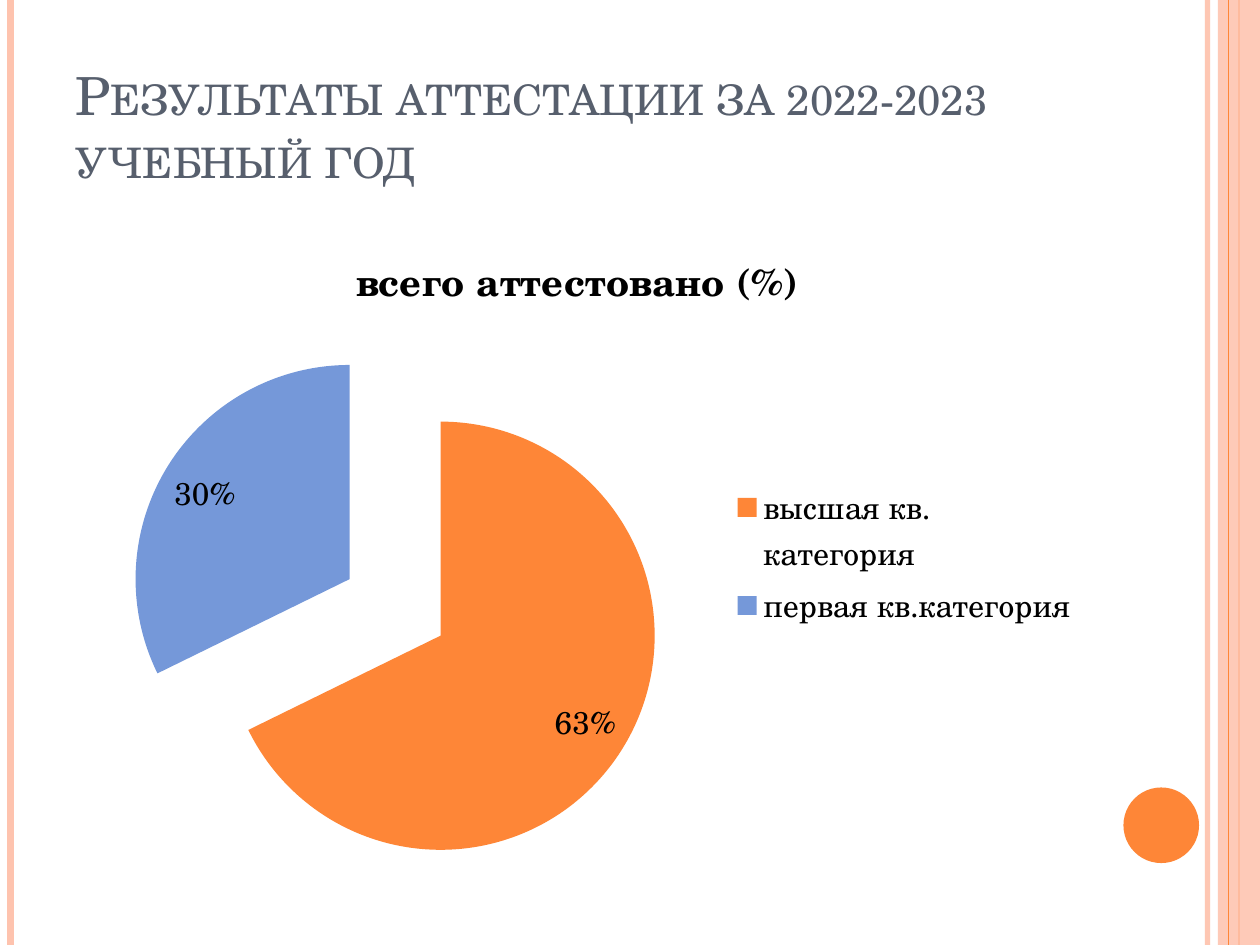
"""Build the slide with a pie chart of staff certification results."""
from dataclasses import dataclass

from lxml.etree import SubElement
from pptx import Presentation
from pptx.chart.data import CategoryChartData
from pptx.dml.color import RGBColor
from pptx.enum.chart import XL_CHART_TYPE, XL_LABEL_POSITION, XL_LEGEND_POSITION
from pptx.enum.shapes import MSO_CONNECTOR, MSO_SHAPE
from pptx.enum.text import MSO_ANCHOR
from pptx.oxml import parse_xml
from pptx.oxml.ns import nsdecls, qn
from pptx.util import Pt

WIDTH, HEIGHT = 720, 540
FONT = "TeX Gyre Schola"
ORANGE, PEACH, BLUE, SLATE, BLACK = "FE8637", "FEC3AE", "7598D9", "575F6D", "000000"
CHART_TITLE = "всего аттестовано (%)"


@dataclass
class Rule:
    x: float
    width: float
    color: str
    alpha: int = 100


@dataclass
class Block:
    kind: MSO_SHAPE
    left: float
    top: float
    width: float
    height: float
    color: str
    alpha: int = 100


@dataclass
class Slice:
    label: str
    value: float
    color: str


DECOR = [
    Rule(690, 3, PEACH, 93),
    Rule(6, 4.5, PEACH),
    Rule(708, 1.5, ORANGE),
    Block(MSO_SHAPE.RECTANGLE, 696, 0, 24, HEIGHT, PEACH, 87),
    Rule(702, 0.75, ORANGE),
    Block(MSO_SHAPE.OVAL, 642, 450, 43.2, 43.2, ORANGE),
]
SLICES = [
    Slice("высшая кв. категория", 0.63, ORANGE),
    Slice("первая кв.категория", 0.3, BLUE),
]


def rgb(color: str) -> RGBColor:
    return RGBColor.from_string(color)


def paint(fill, color: str, alpha: int, sp) -> None:
    fill.solid()
    fill.fore_color.rgb = rgb(color)
    if alpha < 100:
        clr = next(sp._element.spPr.iter(qn("a:srgbClr")))
        SubElement(clr, qn("a:alpha")).set("val", str(alpha * 1000))


def style_font(font, size: float, color: str, bold: bool = False) -> None:
    font.name, font.size, font.bold = FONT, Pt(size), bold
    font.color.rgb = rgb(color)


def add_rule(s, rule: Rule) -> None:
    x = Pt(rule.x)
    sp = s.shapes.add_connector(MSO_CONNECTOR.STRAIGHT, x, 0, x, Pt(HEIGHT))
    sp.line.width = Pt(rule.width)
    paint(sp.line.fill, rule.color, rule.alpha, sp)
    SubElement(sp._element.spPr, qn("a:effectLst"))


def add_block(s, block: Block) -> None:
    box = map(Pt, (block.left, block.top, block.width, block.height))
    sp = s.shapes.add_shape(block.kind, *box)
    sp.shadow.inherit = False
    paint(sp.fill, block.color, block.alpha, sp)
    sp.line.fill.background()


def add_text(s, text: str, *, left: float, top: float, width: float,
             height: float, size: float, color: str) -> None:
    tf = s.shapes.add_textbox(Pt(left), Pt(top), Pt(width), Pt(height)).text_frame
    tf.word_wrap = True
    tf.vertical_anchor = MSO_ANCHOR.BOTTOM
    r = tf.paragraphs[0].add_run()
    r.text = text
    style_font(r.font, size, color)
    r.font._element.set("cap", "small")


def add_pie(s, slices: list[Slice], *, left: float, top: float,
            width: float, height: float) -> None:
    data = CategoryChartData(number_format="0%")
    data.categories = [item.label for item in slices]
    data.add_series(CHART_TITLE, [item.value for item in slices])
    chart = s.shapes.add_chart(XL_CHART_TYPE.PIE, Pt(left), Pt(top),
                               Pt(width), Pt(height), data).chart
    style_font(chart.font, 18, BLACK)

    chart.has_title = True
    p = chart.chart_title.text_frame.paragraphs[0]
    r = p.add_run()
    r.text = CHART_TITLE
    style_font(r.font, 21.6, BLACK, bold=True)
    chart.chart_title.include_in_layout = False

    chart.has_legend = True
    chart.legend.position = XL_LEGEND_POSITION.RIGHT
    chart.legend.include_in_layout = False

    plot = chart.plots[0]
    plot.vary_by_categories = True
    plot.has_data_labels = True
    labels = plot.data_labels
    labels.show_value, labels.show_percentage = True, False
    labels.number_format, labels.number_format_is_linked = "0%", False
    labels.position = XL_LABEL_POSITION.INSIDE_END
    style_font(labels.font, 18, BLACK)

    series = plot.series[0]
    for i, item in enumerate(slices):
        fill = series.points[i].format.fill
        fill.solid()
        fill.fore_color.rgb = rgb(item.color)
    first_point = series._element.find(qn("c:dPt"))
    first_point.addprevious(parse_xml(f'<c:explosion {nsdecls("c")} val="25"/>'))


def main() -> None:
    prs = Presentation()
    prs.slide_width, prs.slide_height = Pt(WIDTH), Pt(HEIGHT)
    s = prs.slides.add_slide(prs.slide_layouts[6])
    s.background.fill.solid()
    s.background.fill.fore_color.rgb = rgb("FFFFFF")
    for item in DECOR:
        if isinstance(item, Rule):
            add_rule(s, item)
        else:
            add_block(s, item)
    add_text(s, "Результаты аттестации за 2022-2023 учебный год", left=36,
             top=21.6, width=588, height=90, size=30, color=SLATE)
    add_pie(s, SLICES, left=36, top=126, width=588, height=384)
    prs.save("out.pptx")


if __name__ == "__main__":
    main()
